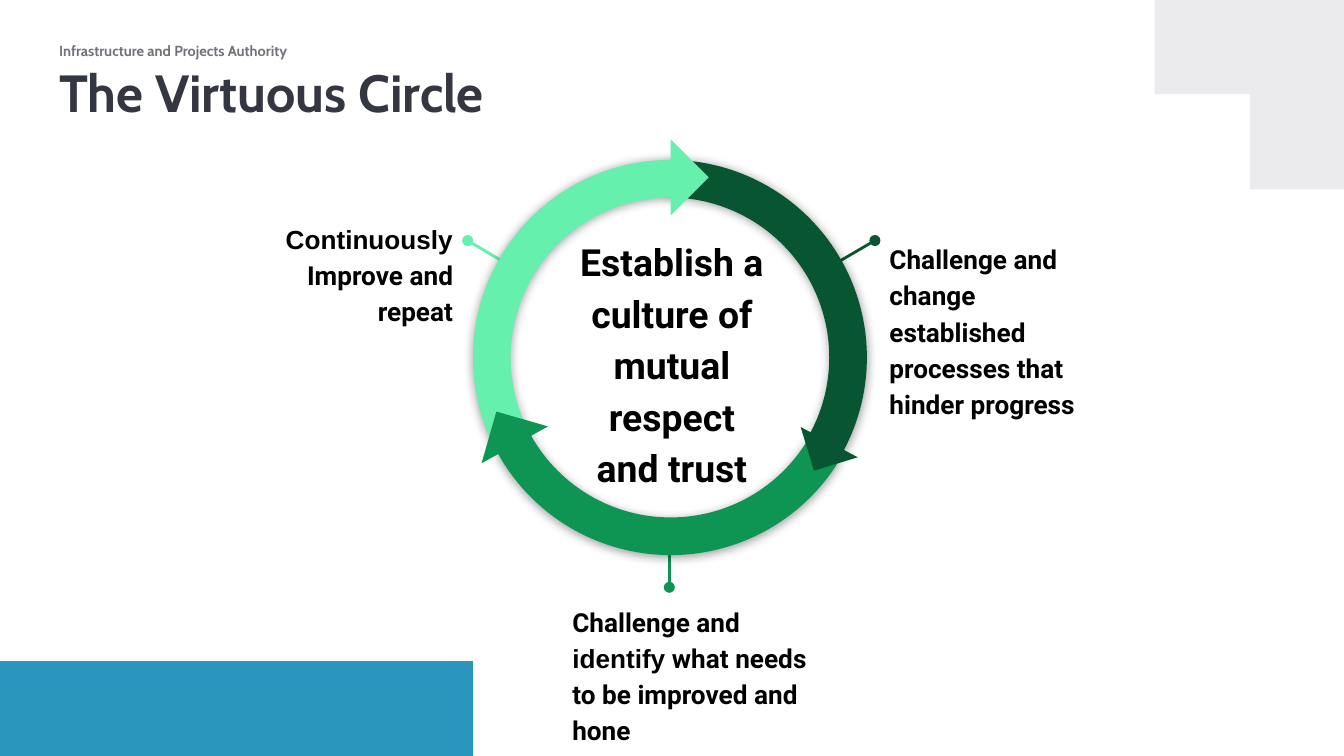
from lxml import etree
from pptx import Presentation
from pptx.dml.color import RGBColor
from pptx.enum.shapes import MSO_CONNECTOR, MSO_SHAPE
from pptx.enum.text import MSO_ANCHOR, PP_ALIGN
from pptx.oxml import parse_xml
from pptx.oxml.ns import nsdecls, qn
from pptx.util import Inches, Pt

LEFT, CENTER, RIGHT = PP_ALIGN.LEFT, PP_ALIGN.CENTER, PP_ALIGN.RIGHT
TOP, MIDDLE = MSO_ANCHOR.TOP, MSO_ANCHOR.MIDDLE
ARC, TRIANGLE = MSO_SHAPE.BLOCK_ARC, MSO_SHAPE.RIGHT_TRIANGLE
COLORS = {
    "title": "343741", "header": "71737A", "text": "000000",
    "blue": "2B96BD", "grey": "EBEAEC",
    "dark": "085631", "mint": "65F0AD", "green": "0E9453",
}
SHADOW = (
    f'<a:outerShdw {nsdecls("a")} blurRad="{Pt(5.6)}" dist="{Pt(0.8)}" dir="5400000" '
    'algn="t" rotWithShape="0"><a:srgbClr val="000000"><a:alpha val="40000"/>'
    '</a:srgbClr></a:outerShdw>'
)


def paint(shape, color):
    shape.shadow.inherit = False
    shape.fill.solid()
    shape.fill.fore_color.rgb = RGBColor.from_string(COLORS[color])
    shape.line.fill.background()


def write(box, spans, size, color="text", align=LEFT, anchor=TOP, inset=0.1, spacing=1.15):
    frame = box.text_frame
    margin = Inches(inset)
    frame_format = {
        "word_wrap": True, "vertical_anchor": anchor, "margin_left": margin,
        "margin_right": margin, "margin_top": margin, "margin_bottom": margin,
    }
    for name, value in frame_format.items():
        setattr(frame, name, value)
    para = frame.paragraphs[0]
    para.alignment, para.line_spacing = align, spacing
    for text, font in spans:
        span = para.add_run()
        span.text = text
        for name, value in {"name": font, "size": Pt(size), "bold": True}.items():
            setattr(span.font, name, value)
        span.font.color.rgb = RGBColor.from_string(COLORS[color])


deck = Presentation()
deck.slide_width = Inches(10)
deck.slide_height = Inches(10 * 9 / 16)
page = deck.slides.add_slide(deck.slide_layouts[5])
shapes = page.shapes

title = shapes.title
title.left, title.top, title.width, title.height = map(Inches, (0.44, 0.5, 7.89, 0.42))
write(title, [("The Virtuous Circle", "Cabin")], 28, "title", anchor=MIDDLE, inset=0, spacing=0.9)

header = shapes.add_textbox(*map(Inches, (0.44, 0.31, 2.59, 0.13)))
write(header, [("Infrastructure and Projects Authority", "Cabin")], 7.8, "header", inset=0, spacing=1)

band = shapes.add_shape(MSO_SHAPE.RECTANGLE, *map(Inches, (0, 4.92, 3.52, 0.7)))
band.height = deck.slide_height - band.top
paint(band, "blue")

corner = [(8.59, 0), (10, 0), (10, 1.41), (9.3, 1.41), (9.3, 0.7), (8.59, 0.7)]
points = [(Inches(x), Inches(y)) for x, y in corner]
outline = shapes.build_freeform(*points[0])
outline.add_line_segments(points[1:], close=True)
paint(outline.convert_to_shape(), "grey")

pointers = [
    ("mint", (3.48, 1.79, 3.95, 2.07)),
    ("dark", (6.51, 1.79, 6.03, 2.07)),
    ("green", (4.98, 4.37, 4.98, 3.87)),
]
for color, ends in pointers:
    pointer = shapes.add_connector(MSO_CONNECTOR.STRAIGHT, *map(Inches, ends))
    pointer.line.color.rgb = RGBColor.from_string(COLORS[color])
    pointer.line.width = Pt(1.5)
    etree.SubElement(pointer.line._get_or_add_ln(), qn("a:headEnd"), type="oval")
    etree.SubElement(pointer._element.spPr, qn("a:effectLst"))

labels = [
    ((1.83, 1.53, 1.64, 0.73), 14, RIGHT, TOP,
     [("Continuously", "Arial"), (" Improve and repeat", "Roboto")]),
    ((6.52, 1.68, 1.64, 0.73), 14, LEFT, TOP,
     [("Challenge and change established processes that hinder progress", "Roboto")]),
    ((4.16, 4.38, 2.02, 0.73), 14, LEFT, TOP,
     [("Challenge and ", "Roboto"), ("identify", "Arial"),
      (" what needs to be improved and hone", "Roboto")]),
    ((4.21, 2.25, 1.58, 0.88), 20, CENTER, MIDDLE,
     [("Establish a culture of mutual respect and trust", "Roboto")]),
]
for place, size, align, anchor, spans in labels:
    label = shapes.add_textbox(*map(Inches, place))
    write(label, spans, size, align=align, anchor=anchor)

thickness = 0.28 / 2.94
ring = [
    (ARC, "dark", (3.51, 1.19, 2.94), 30, False, (144.14, 0.01, thickness)),
    (ARC, "mint", (3.52, 1.19, 2.94), 330, True, (143.49, 214.73, thickness)),
    (TRIANGLE, "mint", (4.79, 1.12, 0.4), 225, False, ()),
    (ARC, "green", (3.52, 1.19, 2.94), 210, True, (143.16, 215.03, thickness)),
    (TRIANGLE, "dark", (6, 3.12, 0.34), 342.9, False, ()),
    (TRIANGLE, "green", (3.63, 3.11, 0.4), 106, False, ()),
]
for kind, color, (left, top, side), turn, flipped, adjustments in ring:
    part = shapes.add_shape(kind, *map(Inches, (left, top, side, side)))
    part.rotation = turn
    for index, value in enumerate(adjustments):
        part.adjustments[index] = value
    paint(part, color)
    if flipped:
        part._element.spPr.xfrm.set("flipH", "1")
    if kind == ARC:
        part._element.spPr.find(qn("a:effectLst")).append(parse_xml(SHADOW))

deck.save("out.pptx")
